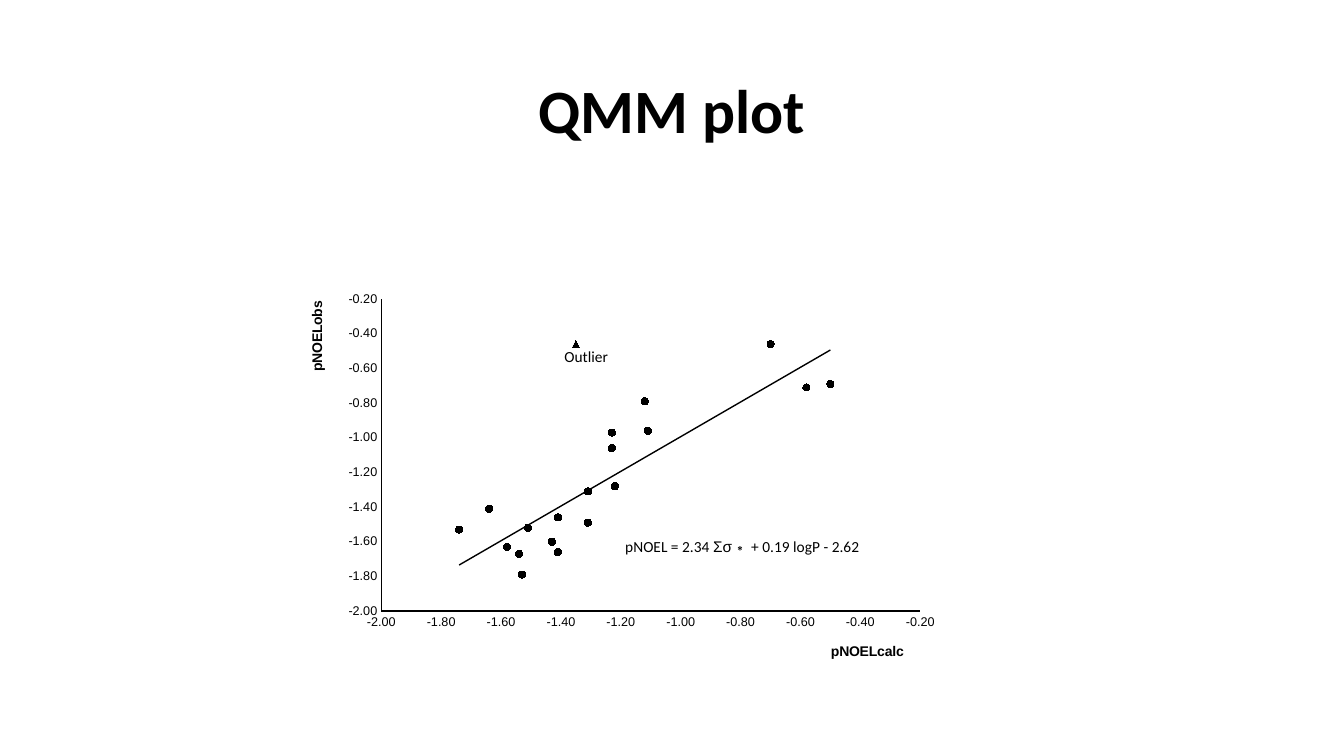
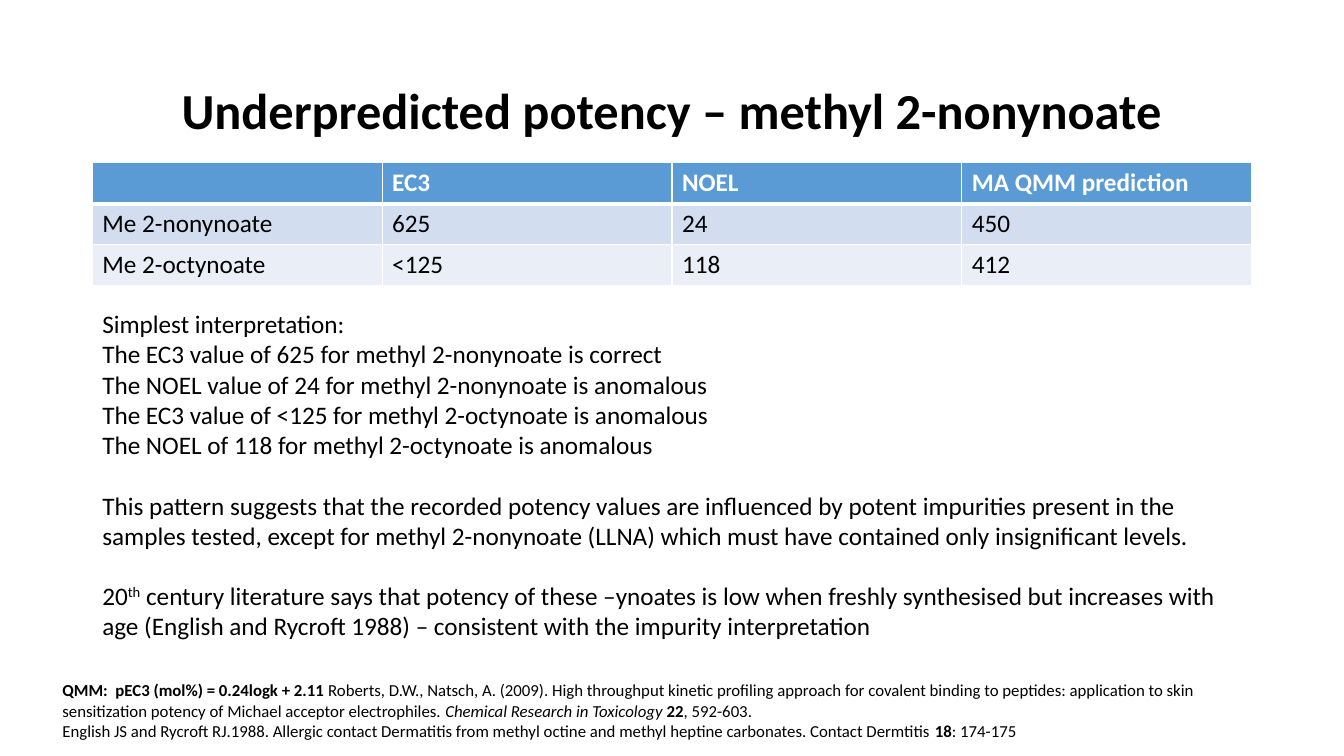
from dataclasses import dataclass
from typing import NamedTuple, Optional

from lxml import etree
from pptx import Presentation
from pptx.chart.data import XyChartData
from pptx.dml.color import RGBColor
from pptx.enum.chart import XL_AXIS_CROSSES, XL_CHART_TYPE, XL_MARKER_STYLE, XL_TICK_MARK
from pptx.enum.text import MSO_ANCHOR, PP_ALIGN
from pptx.oxml.ns import qn
from pptx.util import Pt

# Shared look and constants
EMU_PER_PX = 9525
SLIDE_W, SLIDE_H = 1280, 720
MARGIN, CONTENT_W = 88, 1104
BODY_FONT, CHART_FONT = "Calibri", "Arial"
BLACK, WHITE = "000000", "FFFFFF"
HEADER_FILL, BAND_FILLS = "5B9BD5", ("D2DEEF", "EAEFF7")
CENTER, LEFT = PP_ALIGN.CENTER, PP_ALIGN.LEFT
TOP, MIDDLE = MSO_ANCHOR.TOP, MSO_ANCHOR.MIDDLE
CIRCLE, TRIANGLE = XL_MARKER_STYLE.CIRCLE, XL_MARKER_STYLE.TRIANGLE
SCATTER = XL_CHART_TYPE.XY_SCATTER
NO_TICK, AT_MINIMUM = XL_TICK_MARK.NONE, XL_AXIS_CROSSES.MINIMUM


class Run(NamedTuple):
    text: str
    bold: bool = False
    italic: bool = False
    font: str = BODY_FONT
    baseline: int = 0


@dataclass
class Para:
    runs: list[Run]
    before: int = 0


@dataclass
class PointSet:
    name: str
    marker: XL_MARKER_STYLE
    points: list[tuple[Optional[float], Optional[float]]]
    trend: bool = False


@dataclass
class AxisTitle:
    text: str
    x: float
    y: float
    rotation: int = 0


# Slide content
OBSERVATIONS = PointSet("Series 1", CIRCLE, [
    (-0.7, -0.46), (None, None), (-0.5, -0.69), (-0.58, -0.71), (-1.11, -0.96),
    (-1.12, -0.79), (-1.23, -0.97), (-1.23, -1.06), (-1.41, -1.46), (-1.31, -1.31),
    (-1.22, -1.28), (-1.64, -1.41), (-1.58, -1.63), (-1.51, -1.52), (-1.31, -1.49),
    (-1.74, -1.53), (-1.43, -1.6), (-1.41, -1.66), (-1.54, -1.67), (-1.53, -1.79),
], trend=True)
OUTLIER = PointSet("Series 2", TRIANGLE, [(-1.35, -0.46)])
X_TITLE = AxisTitle("pNOELcalc", 0.69, 0.88)
Y_TITLE = AxisTitle("pNOELobs", 0.03, 0.14, rotation=-5400000)
EQUATION = [Para([
    Run("pNOEL = 2.34 "),
    Run("Σσ∗", font=CHART_FONT),
    Run(" + 0.19 logP - 2.62"),
], before=5)]
POTENCY_ROWS = [
    ["", "EC3", "NOEL", "MA QMM prediction"],
    ["Me 2-nonynoate", "625", "24", "450"],
    ["Me 2-octynoate", "<125", "118", "412"],
]
INTERPRETATION = [
    Para([Run("Simplest interpretation:")]),
    Para([Run("The EC3 value of 625 for methyl 2-nonynoate is correct")]),
    Para([Run("The NOEL value of 24 for methyl 2-nonynoate is anomalous")]),
    Para([Run("The EC3 value of <125 for methyl 2-octynoate is anomalous")]),
    Para([Run("The NOEL of 118 for methyl 2-octynoate is anomalous")]),
    Para([Run("This pattern suggests that the recorded potency values are influenced by "
              "potent impurities present in the samples tested, except for methyl "
              "2-nonynoate (LLNA) which must have contained only insignificant levels.")],
         before=22),
    Para([Run("20"), Run("th", baseline=30000),
          Run(" century literature says that potency of these –ynoates is low when "
              "freshly synthesised but increases with age (English and Rycroft 1988) "
              "– consistent with the impurity interpretation")], before=21),
]
REFERENCES = [
    Para([Run("QMM:  pEC3 (mol%) = 0.24logk + 2.11 ", bold=True),
          Run("Roberts, D.W., Natsch, A. (2009). High throughput kinetic profiling "
              "approach for covalent binding to peptides: application to skin "
              "sensitization potency of Michael acceptor electrophiles. "),
          Run("Chemical Research in Toxicology ", italic=True),
          Run("22", bold=True), Run(", 592-603.")]),
    Para([Run("English JS and Rycroft RJ.1988. Allergic contact Dermatitis from methyl "
              "octine and methyl heptine carbonates. Contact Dermtitis "),
          Run("18", bold=True), Run(": 174-175")]),
]


# Helpers
def px(n: int) -> int:
    return n * EMU_PER_PX


def rgb(color: str) -> RGBColor:
    return RGBColor.from_string(color)


def set_font(font, size: int, color: str = BLACK, name: str = BODY_FONT,
             bold: bool = False, italic: bool = False) -> None:
    font.size, font.name = Pt(size), name
    font.bold, font.italic = bold, italic
    font.color.rgb = rgb(color)


def add_text(s, paras: list[Para], x: int, y: int, w: int, h: int, *, size: int,
             align=LEFT, anchor=TOP, spacing: float = 1.0) -> None:
    tf = s.shapes.add_textbox(px(x), px(y), px(w), px(h)).text_frame
    tf.word_wrap, tf.vertical_anchor = True, anchor
    for i, para in enumerate(paras):
        p = tf.add_paragraph() if i else tf.paragraphs[0]
        p.alignment, p.line_spacing = align, spacing
        p.space_before = Pt(para.before)
        for run in para.runs:
            r = p.add_run()
            r.text = run.text
            set_font(r.font, size, name=run.font, bold=run.bold, italic=run.italic)
            if run.baseline:
                r.font._element.set("baseline", str(run.baseline))


def add_title(s, text: str, size: int) -> None:
    add_text(s, [Para([Run(text, bold=True)])], MARGIN, 38, CONTENT_W, 140,
             size=size, align=CENTER, anchor=MIDDLE, spacing=0.9)


# Chart parts
def set_layout(parent, index: int, **values) -> None:
    for old in parent.findall(qn("c:layout")):
        parent.remove(old)
    layout = etree.Element(qn("c:layout"))
    manual = etree.SubElement(layout, qn("c:manualLayout"))
    for tag, value in values.items():
        etree.SubElement(manual, qn(f"c:{tag}")).set("val", str(value))
    parent.insert(index, layout)


def style_axis(axis, title: AxisTitle) -> None:
    axis.minimum_scale, axis.maximum_scale, axis.major_unit = -2, -0.2, 0.2
    axis.has_major_gridlines = False
    axis.major_tick_mark = axis.minor_tick_mark = NO_TICK
    axis.crosses = AT_MINIMUM
    axis.format.line.color.rgb = rgb(BLACK)
    axis.format.line.width = Pt(1)
    labels = axis.tick_labels
    labels.number_format, labels.number_format_is_linked = "#,##0.00", False
    set_font(labels.font, 9, name=CHART_FONT)
    tf = axis.axis_title.text_frame
    tf.text = title.text
    set_font(tf.paragraphs[0].runs[0].font, 10, name=CHART_FONT, bold=True)
    tf._txBody.bodyPr.set("rot", str(title.rotation))
    set_layout(axis.axis_title._element, 1, xMode="edge", yMode="edge",
               x=title.x, y=title.y)


def drop_missing_points(series) -> None:
    for pt in list(series._element.iter(qn("c:pt"))):
        if pt.findtext(qn("c:v")) in (None, "", "None"):
            pt.getparent().remove(pt)


def add_trendline(series) -> None:
    trend = etree.Element(qn("c:trendline"))
    line = etree.SubElement(etree.SubElement(trend, qn("c:spPr")), qn("a:ln"))
    line.set("w", str(Pt(1)))
    fill = etree.SubElement(line, qn("a:solidFill"))
    etree.SubElement(fill, qn("a:srgbClr")).set("val", BLACK)
    for tag, value in (("trendlineType", "linear"), ("dispRSqr", "0"), ("dispEq", "0")):
        etree.SubElement(trend, qn(f"c:{tag}")).set("val", value)
    series._element.find(qn("c:xVal")).addprevious(trend)


def add_scatter(s, groups: list[PointSet], x: int, y: int, w: int, h: int) -> None:
    data = XyChartData()
    for group in groups:
        points = data.add_series(group.name)
        for point in group.points:
            points.add_data_point(*point)
    chart = s.shapes.add_chart(SCATTER, px(x), px(y), px(w), px(h), data).chart
    chart.has_legend = chart.has_title = False
    set_font(chart.font, 10, name=CHART_FONT)
    plot = chart.plots[0]
    plot.vary_by_categories = False
    for series, group in zip(plot.series, groups):
        drop_missing_points(series)
        series.format.line.fill.background()
        marker = series.marker
        marker.style, marker.size = group.marker, 5
        marker.format.fill.solid()
        marker.format.fill.fore_color.rgb = rgb(BLACK)
        marker.format.line.color.rgb = rgb(BLACK)
        if group.trend:
            add_trendline(series)
    style_axis(chart.category_axis, X_TITLE)
    style_axis(chart.value_axis, Y_TITLE)
    set_layout(plot._element.getparent(), 0, layoutTarget="inner", xMode="edge",
               yMode="edge", x=0.126, y=0.141, w=0.68, h=0.677)


# Table parts
def set_borders(cell, bottom: int) -> None:
    tc_pr = cell._tc.get_or_add_tcPr()
    for i, (side, width) in enumerate(zip("LRTB", (1, 1, 1, bottom))):
        line = etree.Element(qn(f"a:ln{side}"))
        line.set("w", str(Pt(width)))
        fill = etree.SubElement(line, qn("a:solidFill"))
        etree.SubElement(fill, qn("a:srgbClr")).set("val", WHITE)
        tc_pr.insert(i, line)


def add_table(s, rows: list[list[str]], x: int, y: int, w: int, row_h: int) -> None:
    table = s.shapes.add_table(len(rows), len(rows[0]), px(x), px(y), px(w),
                               px(row_h * len(rows))).table
    for i, texts in enumerate(rows):
        header = i == 0
        color = WHITE if header else BLACK
        for j, text in enumerate(texts):
            cell = table.cell(i, j)
            cell.fill.solid()
            cell.fill.fore_color.rgb = rgb(HEADER_FILL if header else BAND_FILLS[i - 1])
            set_borders(cell, bottom=3 if header else 1)
            p = cell.text_frame.paragraphs[0]
            if text:
                r = p.add_run()
                r.text = text
                set_font(r.font, 18, color, bold=header)


# Slides
def build_plot_slide(s) -> None:
    add_title(s, "QMM plot", 44)
    add_scatter(s, [OBSERVATIONS, OUTLIER], 268, 223, 755, 439)
    add_text(s, EQUATION, 586, 507, 286, 33, size=11)
    add_text(s, [Para([Run("Outlier")], before=5)], 528, 326, 90, 32, size=11)


def build_potency_slide(s) -> None:
    add_title(s, "Underpredicted potency – methyl 2-nonynoate", 36)
    add_table(s, POTENCY_ROWS, MARGIN, 155, CONTENT_W, 39)
    add_text(s, REFERENCES, 50, 643, 1161, 77, size=12)
    add_text(s, INTERPRETATION, MARGIN, 289, CONTENT_W, 329, size=18)


def main() -> None:
    prs = Presentation()
    prs.slide_width, prs.slide_height = px(SLIDE_W), px(SLIDE_H)
    for build in (build_plot_slide, build_potency_slide):
        build(prs.slides.add_slide(prs.slide_layouts[6]))
    prs.save("out.pptx")


if __name__ == "__main__":
    main()
